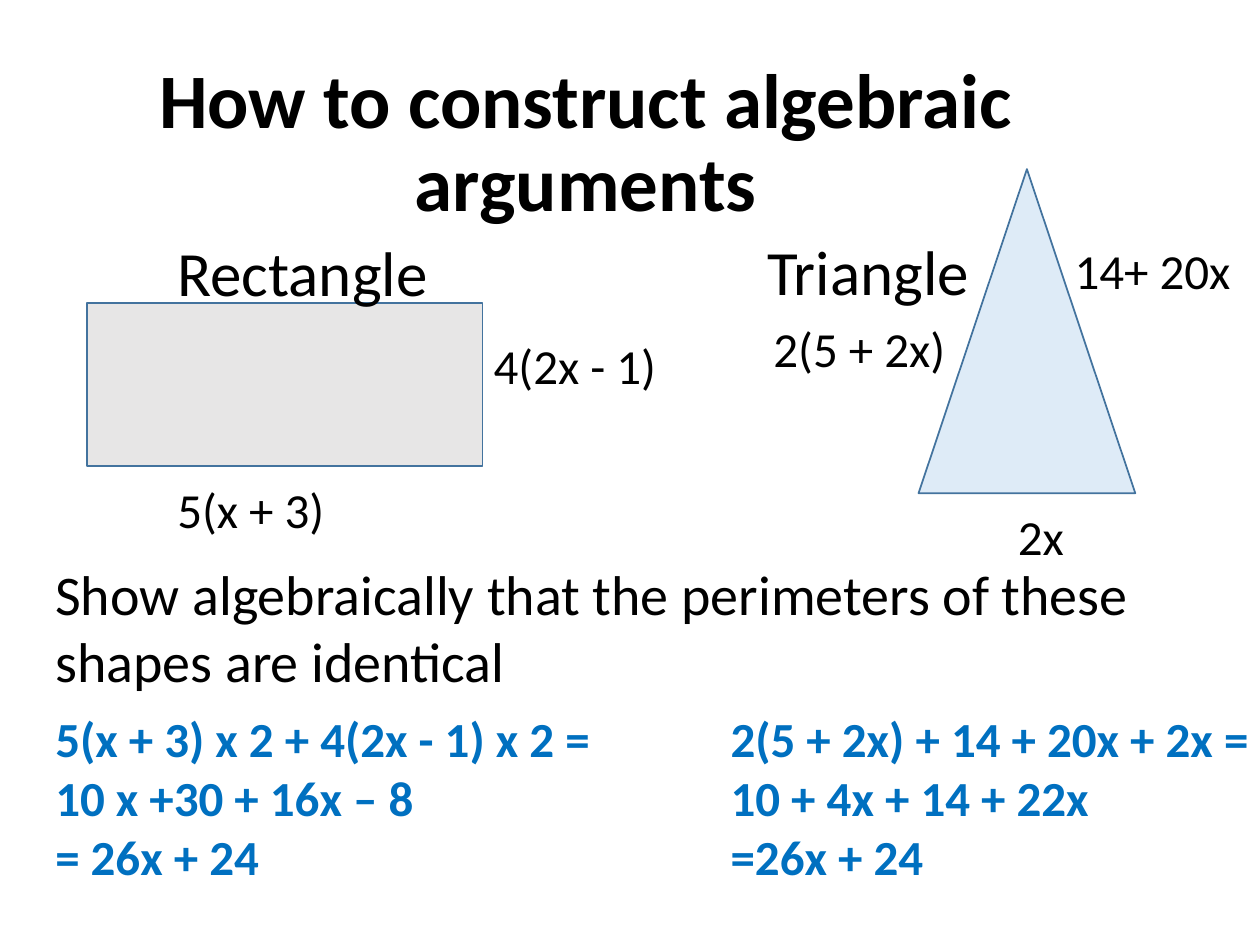
from pptx import Presentation
from pptx.dml.color import RGBColor
from pptx.enum.shapes import MSO_SHAPE as Shape
from pptx.enum.text import MSO_ANCHOR as Anchor, PP_ALIGN as Align
from pptx.util import Inches, Pt

WIDTH, HEIGHT = Inches(10), Inches(7.5)
BLACK, BLUE, OUTLINE = "000000", "0070C0", "43739E"
GREY, PALE_BLUE = "E7E6E6", "DEEBF7"
MARGIN = 3.4
WORK_TOP = 74.3


def color(code):
    return RGBColor.from_string(code)


def area(left, top, width, height):
    """Turn percentages of the slide's size into lengths."""
    return (round(WIDTH * left / 100), round(HEIGHT * top / 100),
            round(WIDTH * width / 100), round(HEIGHT * height / 100))


def add_text(page, place, lines, size, ink=BLACK, bold=False):
    box = page.shapes.add_textbox(*area(*place))
    frame = box.text_frame
    frame.word_wrap = True
    frame.text = "\n".join(lines)
    for para in frame.paragraphs:
        para.font.name = "Calibri"
        para.font.size = Pt(size)
        para.font.bold = bold
        para.font.color.rgb = color(ink)
    return frame


def add_title(page, text):
    frame = add_text(page, (MARGIN, 5.7, 86.2, 19.3), [text], 44, bold=True)
    frame.vertical_anchor = Anchor.MIDDLE
    para = frame.paragraphs[0]
    para.alignment = Align.CENTER
    para.line_spacing = 0.9


def add_figure(page, kind, place, fill):
    figure = page.shapes.add_shape(kind, *area(*place))
    figure.shadow.inherit = False
    figure.fill.solid()
    figure.fill.fore_color.rgb = color(fill)
    figure.line.color.rgb = color(OUTLINE)
    figure.line.width = Pt(1)


def add_heading(page, left, top, text):
    add_text(page, (left, top, 26.9, 9.5), [text], 36)


def add_side_length(page, left, top, text):
    add_text(page, (left, top, 15.7, 7.6), [text], 28)


def add_working(page, left, width, lines):
    add_text(page, (left, WORK_TOP, width, 20.1), lines, 28, BLUE, bold=True)


def main():
    deck = Presentation()
    deck.slide_width, deck.slide_height = WIDTH, HEIGHT
    page = deck.slides.add_slide(deck.slide_layouts[6])

    add_title(page, "How to construct algebraic arguments")
    add_figure(page, Shape.RECTANGLE, (6.9, 32.1, 31.4, 17.2), GREY)
    add_figure(page, Shape.ISOSCELES_TRIANGLE, (72.9, 17.9, 17.2, 34.3), PALE_BLUE)
    add_text(page, (MARGIN, 58.5, 97.2, 15.7),
             ["Show algebraically that the perimeters of these shapes are identical"], 32)

    add_heading(page, 13.1, 24.1, "Rectangle")
    add_side_length(page, 13.1, 50.1, "5(x + 3)")
    add_side_length(page, 38.2, 34.8, "4(2x - 1)")

    add_heading(page, 59.9, 24, "Triangle")
    add_side_length(page, 79.8, 52.9, "2x")
    add_side_length(page, 84.3, 24.8, "14+ 20x")
    add_side_length(page, 60.4, 33.1, "2(5 + 2x)")

    add_working(page, MARGIN, 59.8,
                ["5(x + 3) x 2 + 4(2x - 1) x 2 =", "10 x +30 + 16x – 8", "= 26x + 24"])
    add_working(page, 57, 51.2,
                ["2(5 + 2x) + 14 + 20x + 2x =", "10 + 4x + 14 + 22x", "=26x + 24"])

    deck.save("out.pptx")


if __name__ == "__main__":
    main()
